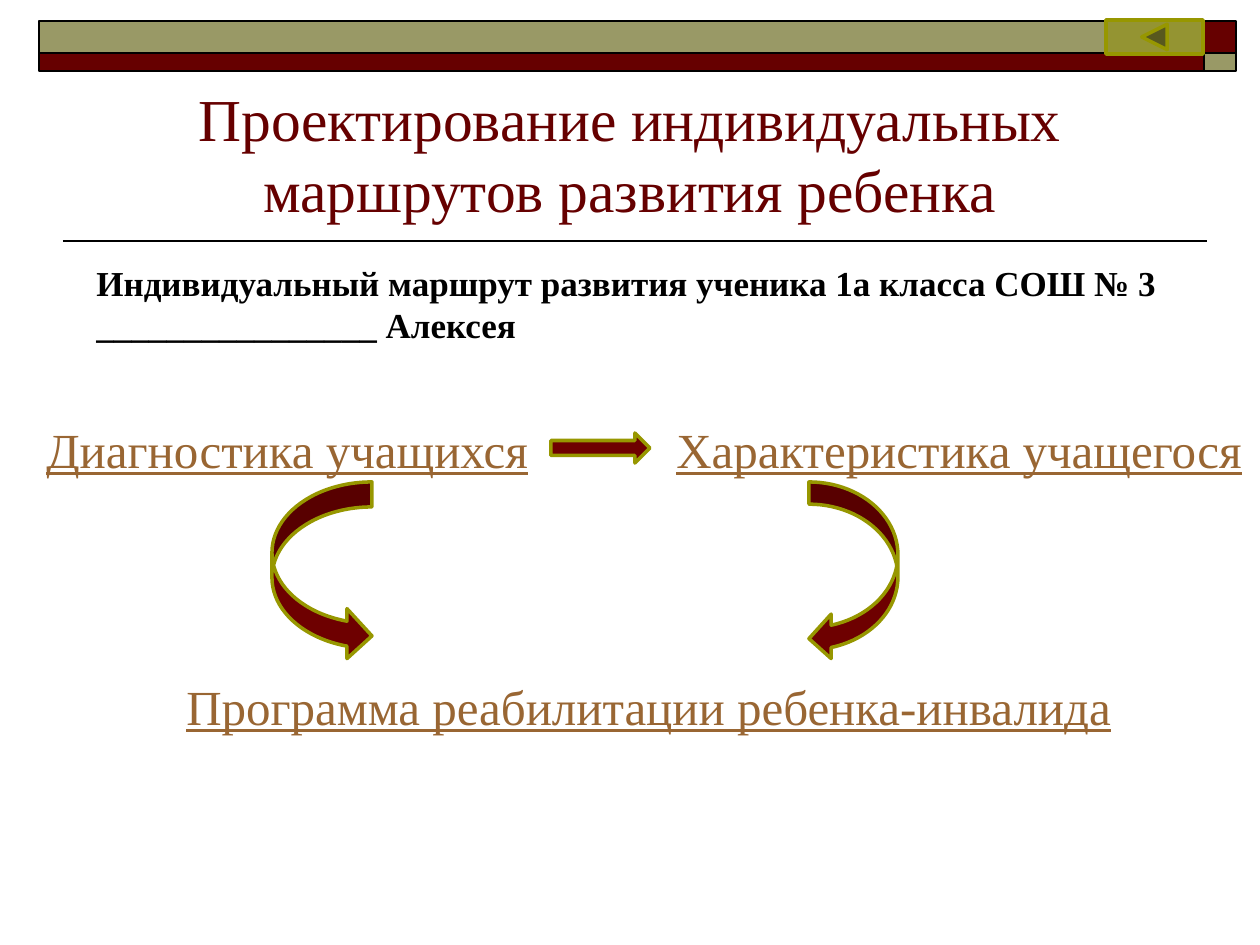
from lxml.etree import SubElement
from pptx import Presentation
from pptx.dml.color import RGBColor
from pptx.enum.shapes import MSO_CONNECTOR, MSO_SHAPE
from pptx.enum.text import MSO_ANCHOR, PP_ALIGN
from pptx.oxml.ns import qn
from pptx.util import Emu, Pt

PX = 914400 // 126  # EMU per pixel
FONT = "Times New Roman"
BLACK = RGBColor(0x00, 0x00, 0x00)
MAROON = RGBColor(0x66, 0x00, 0x00)
ARROW_RED = RGBColor(0x6E, 0x00, 0x00)
KHAKI = RGBColor(0x99, 0x99, 0x66)
BUTTON = RGBColor(0x94, 0x94, 0x32)
OLIVE = RGBColor(0x97, 0x97, 0x00)
LINK = RGBColor(0x99, 0x66, 0x33)


def px(*lengths):
    return [Emu(length * PX) for length in lengths]


class RouteSlide:
    def __init__(self, prs):
        self.slide = prs.slides.add_slide(prs.slide_layouts[5])
        self.shapes = self.slide.shapes

    def style(self, paragraph, size, color, bold=False, underline=False):
        font = paragraph.font
        font.name, font.size, font.bold = FONT, Pt(size), bold
        font.underline = underline
        font.color.rgb = color

    def title(self, text, box):
        title = self.shapes.title
        title.left, title.top, title.width, title.height = px(*box)
        frame = title.text_frame
        frame.text = text
        frame.word_wrap = True
        frame.vertical_anchor = MSO_ANCHOR.BOTTOM
        frame.paragraphs[0].alignment = PP_ALIGN.CENTER
        self.style(frame.paragraphs[0], 34, MAROON)

    def text(self, lines, box, size, color, **emphasis):
        frame = self.shapes.add_textbox(*px(*box)).text_frame
        frame.word_wrap = False
        frame.text = "\n".join(lines)
        for paragraph in frame.paragraphs:
            self.style(paragraph, size, color, **emphasis)

    def shape(self, kind, box, fill, line, width):
        shape = self.shapes.add_shape(kind, *px(*box))
        shape.shadow.inherit = False
        shape.fill.solid()
        shape.fill.fore_color.rgb = fill
        shape.line.color.rgb = line
        shape.line.width = Pt(width)

    def rule(self, left, right, y):
        rule = self.shapes.add_connector(MSO_CONNECTOR.STRAIGHT, *px(left, y, right, y))
        rule.line.color.rgb = BLACK
        rule.line.width = Pt(1)
        SubElement(rule._element.spPr, qn("a:effectLst"))


def main():
    prs = Presentation()
    prs.slide_width, prs.slide_height = px(1260, 945)
    page = RouteSlide(prs)

    # Header band: two rows with swapped colours at the right end
    left, split, right = 39, 1204, 1236
    for top, height, bar, end in ((21, 32, KHAKI, MAROON), (53, 18, MAROON, KHAKI)):
        page.shape(MSO_SHAPE.RECTANGLE, (left, top, split - left, height), bar, BLACK, 1)
        page.shape(MSO_SHAPE.RECTANGLE, (split, top, right - split, height), end, BLACK, 1)
    page.rule(63, 1207, 241)

    # Title and subject
    page.title("Проектирование индивидуальных маршрутов развития ребенка",
               (63, 73, 1134, 158))
    page.text(["Индивидуальный маршрут развития ученика 1а класса СОШ № 3",
               "________________ Алексея"],
              (84, 255, 1094, 136), 20, BLACK, bold=True)

    # Stages of the route
    for stage, box in (
        ("Программа реабилитации ребенка-инвалида", (174, 670, 960, 72)),
        ("Характеристика учащегося", (664, 413, 596, 72)),
        ("Диагностика учащихся", (34, 413, 512, 72)),
    ):
        page.text([stage], box, 28, LINK, underline=True)

    # Back button and arrows between the stages
    for kind, box, fill in (
        (MSO_SHAPE.ACTION_BUTTON_BACK_OR_PREVIOUS, (1106, 20, 97, 34), BUTTON),
        (MSO_SHAPE.RIGHT_ARROW, (551, 433, 99, 30), ARROW_RED),
        (MSO_SHAPE.CURVED_RIGHT_ARROW, (272, 482, 100, 179), ARROW_RED),
        (MSO_SHAPE.CURVED_LEFT_ARROW, (809, 482, 89, 179), ARROW_RED),
    ):
        page.shape(kind, box, fill, OLIVE, 2)

    prs.save("out.pptx")


if __name__ == "__main__":
    main()
